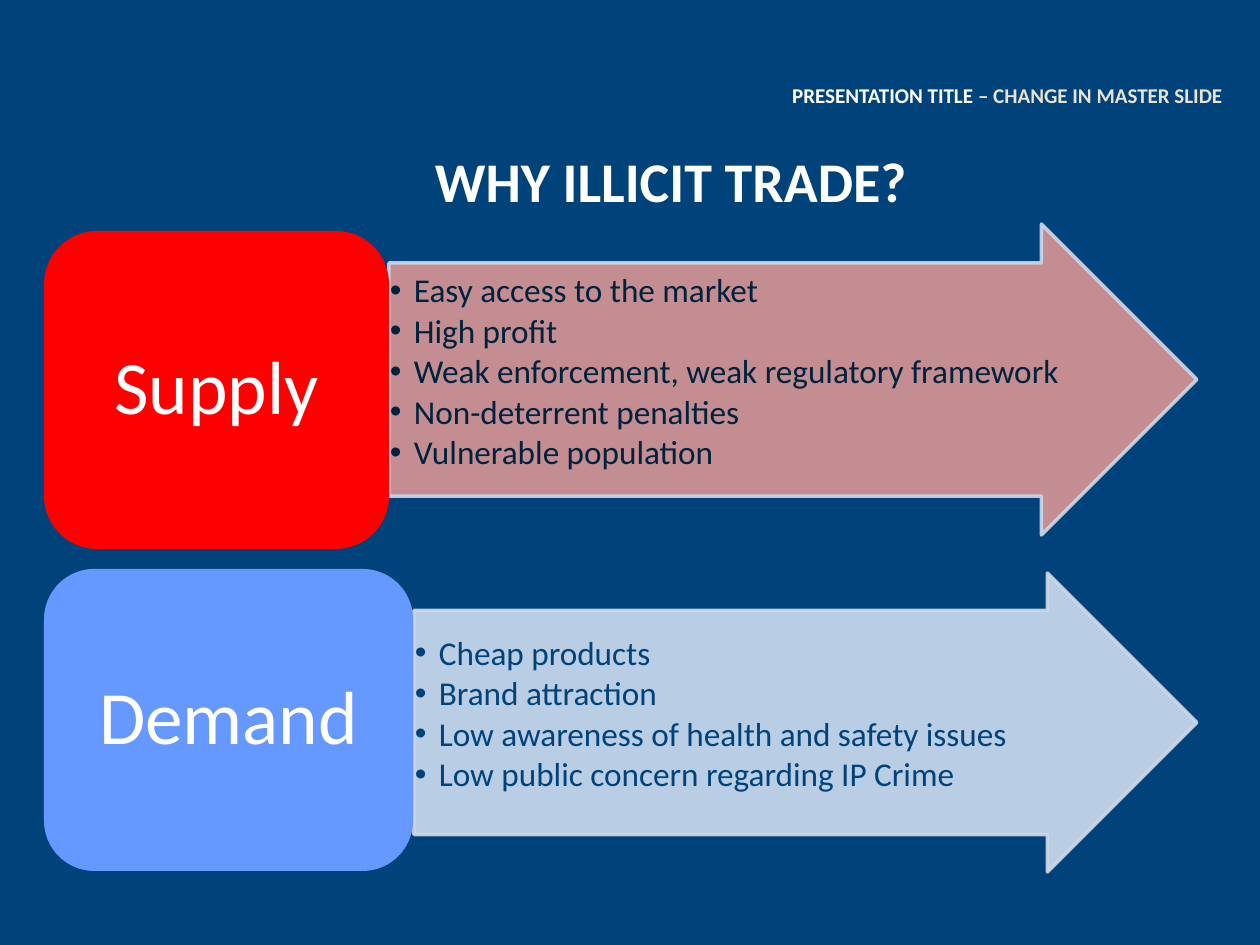
from lxml import etree
from pptx import Presentation
from pptx.dml.color import RGBColor
from pptx.enum.shapes import MSO_SHAPE as Shape
from pptx.enum.text import MSO_ANCHOR as Anchor, PP_ALIGN as Align
from pptx.oxml.ns import qn
from pptx.util import Pt

SCALE = 914400 / 126
NAVY = RGBColor(0x00, 0x43, 0x7A)
DARK = RGBColor(0x00, 0x22, 0x3D)
WHITE = RGBColor(0xFF, 0xFF, 0xFF)
CREAM = RGBColor(0xEA, 0xE2, 0xD2)
RED = RGBColor(0xFF, 0x00, 0x00)
BLUE = RGBColor(0x66, 0x99, 0xFF)
ROSE = RGBColor(0xD9, 0x96, 0x94)
PALE = RGBColor(0xB9, 0xCD, 0xE5)
EDGE = RGBColor(0xD0, 0xD8, 0xE8)


def px(*nums):
    return [round(num * SCALE) for num in nums]


def write(par, text, size, color, bold=False):
    run = par.add_run()
    run.text = text
    look = {"name": "Calibri", "size": Pt(size), "bold": bold}
    for key, value in look.items():
        setattr(run.font, key, value)
    run.font.color.rgb = color


deck = Presentation()
deck.slide_width, deck.slide_height = px(1260, 945)
slide = deck.slides.add_slide(deck.slide_layouts[6])
slide.background.fill.solid()
slide.background.fill.fore_color.rgb = NAVY

# Header and title
heads = [
    ((625, 76, 610, 38), Align.RIGHT, Anchor.BOTTOM, 12,
     [("PRESENTATION TITLE ", WHITE), ("– CHANGE IN MASTER SLIDE", CREAM)]),
    ((145, 140, 1052, 80), Align.CENTER, Anchor.MIDDLE, 32,
     [("WHY ILLICIT TRADE?", WHITE)]),
]
for area, align, anchor, size, parts in heads:
    frame = slide.shapes.add_textbox(*px(*area)).text_frame
    frame.word_wrap = True
    frame.vertical_anchor = anchor
    frame.paragraphs[0].alignment = align
    for text, color in parts:
        write(frame.paragraphs[0], text, size, color, True)

# Each row: arrow area, fill, opacity, text colour, top inset, points, label
rows = [
    ((389, 224, 808, 311), ROSE, 90, DARK, 11,
     ["Easy access to the market", "High profit",
      "Weak enforcement, weak regulatory framework",
      "Non-deterrent penalties", "Vulnerable population"],
     "Supply", (44, 231, 345, 318), RED),
    ((414, 573, 783, 299), PALE, 100, NAVY, 26,
     ["Cheap products", "Brand attraction",
      "Low awareness of health and safety issues",
      "Low public concern regarding IP Crime"],
     "Demand", (44, 569, 369, 302), BLUE),
]
for area, fill, alpha, ink, top, points, label, spot, tint in rows:
    # Arrow with bullets
    arrow = slide.shapes.add_shape(Shape.RIGHT_ARROW, *px(*area))
    arrow.shadow.inherit = False
    arrow.adjustments[0], arrow.adjustments[1] = 0.75, 0.5
    arrow.fill.solid()
    arrow.fill.fore_color.rgb = fill
    arrow.line.color.rgb = EDGE
    arrow.line.width = Pt(2)
    solids = arrow.fill._xPr.iter(qn("a:srgbClr"))
    for node, level in zip(list(solids), (alpha, 90)):
        etree.SubElement(node, qn("a:alpha"), val=str(level * 1000))
    frame = arrow.text_frame
    left, head = px(1, top)
    layout = {"word_wrap": True, "vertical_anchor": Anchor.TOP,
              "margin_left": left, "margin_right": left,
              "margin_top": head, "margin_bottom": left}
    for key, value in layout.items():
        setattr(frame, key, value)
    for num, text in enumerate(points):
        par = frame.add_paragraph() if num else frame.paragraphs[0]
        props = par._p.get_or_add_pPr()
        step = px(24)[0]
        props.set("marL", str(step))
        props.set("indent", str(-step))
        etree.SubElement(props, qn("a:buFont"), typeface="Arial")
        etree.SubElement(props, qn("a:buChar"), char="•")
        style = {"alignment": Align.LEFT, "line_spacing": 0.9,
                 "space_after": Pt(2.6)}
        for key, value in style.items():
            setattr(par, key, value)
        write(par, text, 19, ink)

    # Label block
    block = slide.shapes.add_shape(Shape.ROUNDED_RECTANGLE, *px(*spot))
    block.shadow.inherit = False
    block.fill.solid()
    block.fill.fore_color.rgb = tint
    block.line.fill.background()
    frame = block.text_frame
    frame.vertical_anchor = Anchor.MIDDLE
    par = frame.paragraphs[0]
    par.alignment = Align.CENTER
    par.line_spacing = 0.9
    write(par, label, 43, WHITE)

deck.save("out.pptx")
